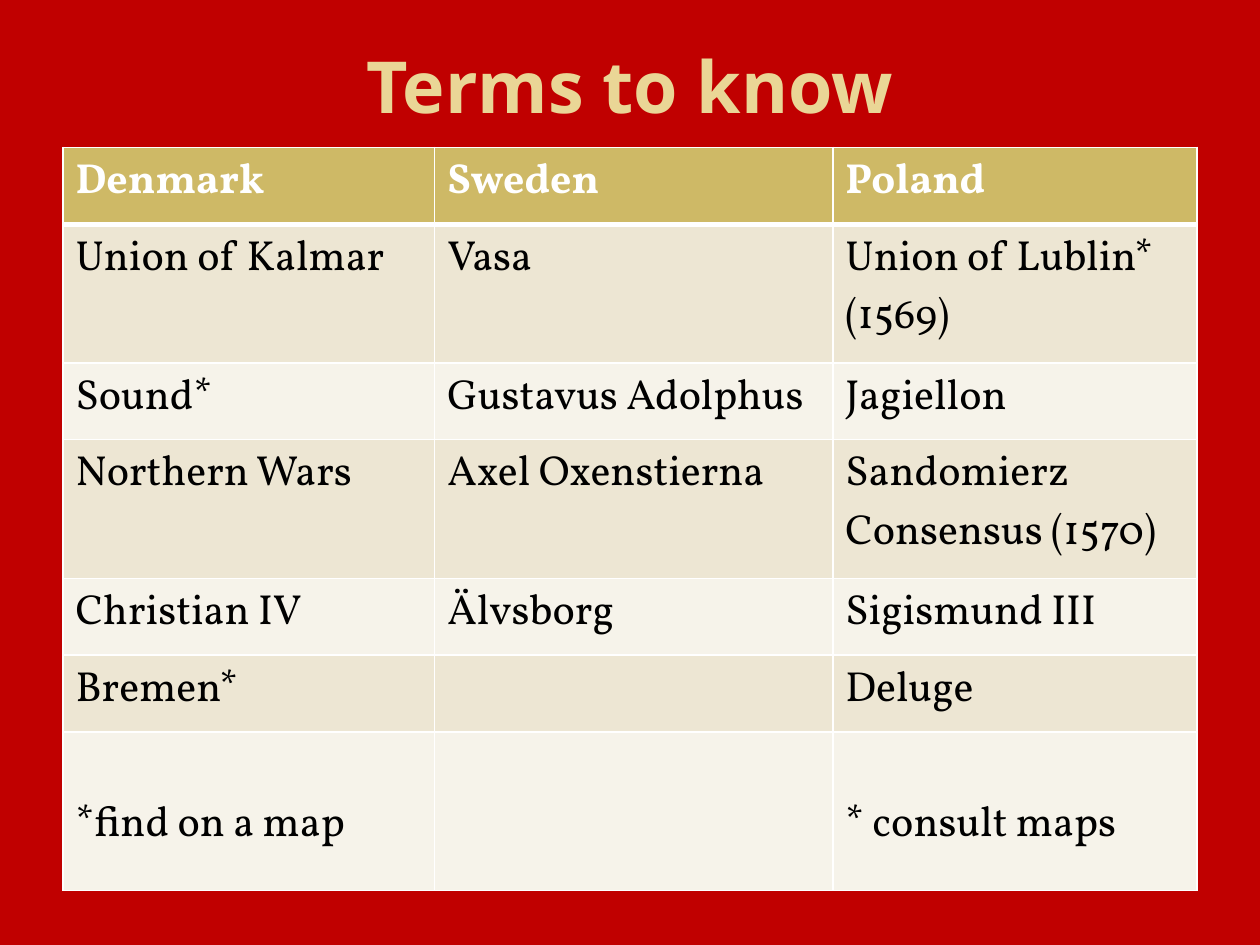
from pptx import Presentation
from pptx import util as u
from pptx.dml.color import RGBColor
from pptx.enum import text
from pptx.oxml import ns
from lxml import etree

RED = RGBColor(0xC0, 0x00, 0x00)
PALE_GOLD = RGBColor(0xEA, 0xD6, 0x96)
GOLD = RGBColor(0xCE, 0xB9, 0x66)
SAND = RGBColor(0xED, 0xE6, 0xD3)
IVORY = RGBColor(0xF6, 0xF3, 0xEA)
WHITE = RGBColor(0xFF, 0xFF, 0xFF)
BLACK = RGBColor(0x00, 0x00, 0x00)

TERMS = [
    ("Denmark", "Sweden", "Poland"),
    ("Union of Kalmar", "Vasa", "Union of Lublin* (1569)"),
    ("Sound*", "Gustavus Adolphus", "Jagiellon"),
    ("Northern Wars", "Axel Oxenstierna", "Sandomierz Consensus (1570)"),
    ("Christian IV", "Älvsborg", "Sigismund III"),
    ("Bremen*", "", "Deluge"),
    ("*find on a map", "", "* consult maps"),
]
COLUMN_WIDTHS = [2.95, 3.16, 2.89]
ROW_HEIGHTS = [0.61, 1.1, 0.61, 1.1, 0.61, 0.61, 1.26]
NOTE_TOP = 0.51


class TermsSlide:
    title_font = {"name": "Open Sans", "size": u.Pt(41), "bold": True}
    term_font = {"name": "Vollkorn", "size": u.Pt(24)}

    def __init__(self, deck):
        self.slide = deck.slides.add_slide(deck.slide_layouts[6])
        background = self.slide.background.fill
        background.solid()
        background.fore_color.rgb = RED

    def wording(self, paragraph, words, color, **formats):
        run = paragraph.add_run()
        run.text = words
        for key, value in formats.items():
            setattr(run.font, key, value)
        run.font.color.rgb = color

    def title(self, words, left, top, width, height):
        heading = self.slide.shapes.add_textbox(
            *map(u.Inches, (left, top, width, height)))
        heading.text_frame.word_wrap = True
        heading.text_frame.vertical_anchor = text.MSO_ANCHOR.MIDDLE
        line = heading.text_frame.paragraphs[0]
        line.alignment = text.PP_ALIGN.CENTER
        self.wording(line, words, PALE_GOLD, **self.title_font)

    def border(self, cell, **points):
        properties = cell._tc.get_or_add_tcPr()
        for side, width in points.items():
            edge = etree.SubElement(
                properties, ns.qn(f"a:ln{side}"), w=str(u.Pt(width)))
            paint = etree.SubElement(edge, ns.qn("a:solidFill"))
            etree.SubElement(paint, ns.qn("a:srgbClr"), val=str(WHITE))

    def cell(self, cell, words, row):
        header = row == 0
        self.border(cell, L=1, R=1, T=3 if row == 1 else 1,
                    B=3 if header else 1)
        cell.fill.solid()
        cell.fill.fore_color.rgb = (
            GOLD if header else SAND if row % 2 else IVORY)
        margins = {"margin_left": 0.1, "margin_right": 0.1,
                   "margin_top": NOTE_TOP if row == len(TERMS) - 1 else 0.05,
                   "margin_bottom": 0.05}
        for key, value in margins.items():
            setattr(cell, key, u.Inches(value))
        if words:
            self.wording(cell.text_frame.paragraphs[0], words,
                         WHITE if header else BLACK, bold=header,
                         **self.term_font)

    def table(self, rows, left, top, widths, heights):
        terms = self.slide.shapes.add_table(
            len(rows), len(widths),
            *map(u.Inches, (left, top, sum(widths), sum(heights)))).table
        for column, width in zip(terms.columns, widths):
            column.width = u.Inches(width)
        for number, (row, height) in enumerate(zip(terms.rows, heights)):
            row.height = u.Inches(height)
            for cell, words in zip(row.cells, rows[number]):
                self.cell(cell, words, number)


def main():
    deck = Presentation()
    deck.slide_width, deck.slide_height = u.Inches(10), u.Inches(7.5)
    page = TermsSlide(deck)
    page.title("Terms to know", 0.5, 0.17, 9, 1)
    page.table(TERMS, 0.5, 1.17, COLUMN_WIDTHS, ROW_HEIGHTS)
    deck.save("out.pptx")


if __name__ == "__main__":
    main()
